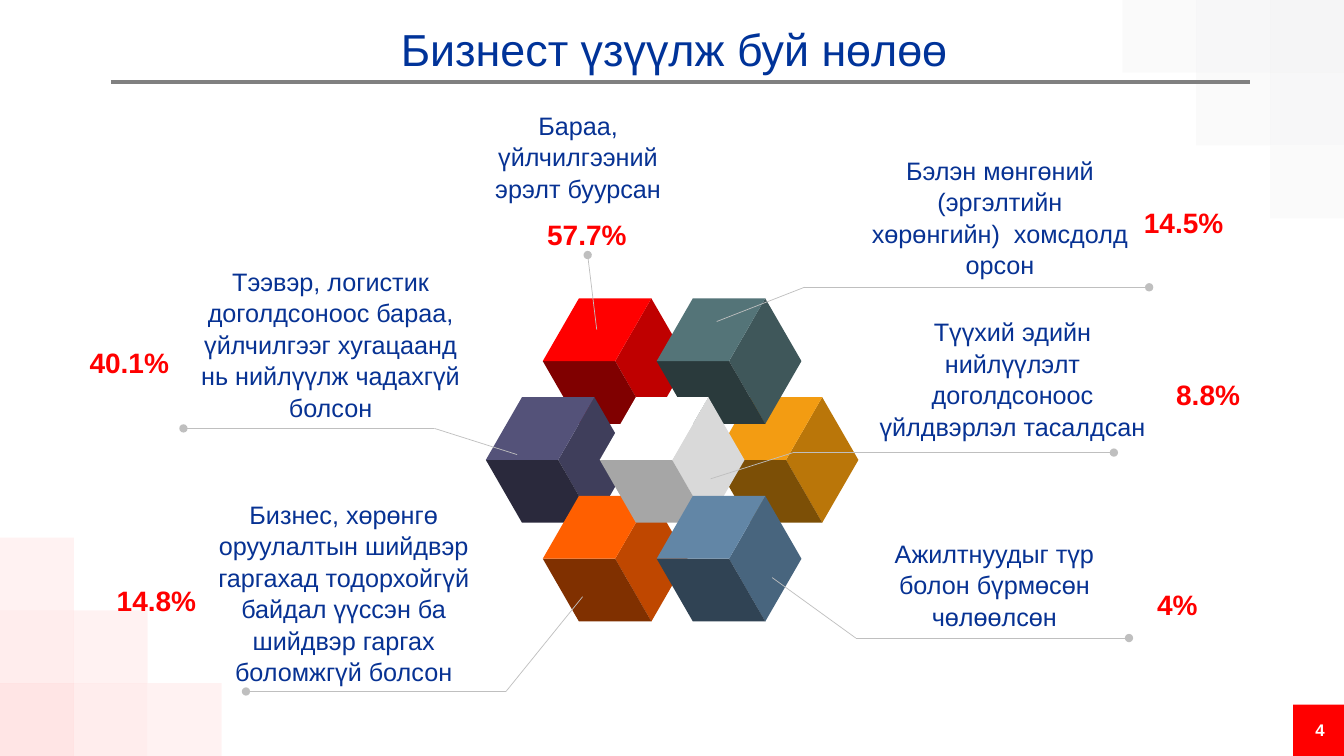
from lxml import etree
from pptx import Presentation
from pptx.dml.color import RGBColor
from pptx.enum.shapes import MSO_CONNECTOR, MSO_SHAPE
from pptx.enum.text import MSO_ANCHOR, PP_ALIGN
from pptx.oxml.ns import qn
from pptx.util import Inches, Pt

RECT = MSO_SHAPE.RECTANGLE
LINE = MSO_CONNECTOR.STRAIGHT
TOP, MIDDLE = MSO_ANCHOR.TOP, MSO_ANCHOR.MIDDLE
LEFT, CENTER = PP_ALIGN.LEFT, PP_ALIGN.CENTER

COLS, ROWS = 133.33, 75
TILE_W, TILE_H = 7.33, 7.22
CUBE_X, CUBE_Y = 48.2, 29.6
STEP_X, STEP_Y = 5.65, 9.8
EDGE_X, EDGE_Y = 3.59, 6.23

# Corner points of each cube face, counted in edges
FACES = (
    ((4, 1), (3, 0), (2, 1), (3, 2)),
    ((3, 2), (2, 1), (0, 1), (1, 2)),
    ((0, 1), (2, 1), (3, 0), (1, 0)),
)

# Column, row, then the colours of the side, front and top
CUBES = (
    (4, 1, "BA7609", "7C4F06", "F39C12"),
    (1, 0, "BF0000", "800000", "FF0000"),
    (3, 0, "3F575A", "2A3A3C", "547478"),
    (0, 1, "3F3E5B", "2A293C", "545279"),
    (1, 2, "BF4700", "803000", "FF5F00"),
    (2, 1, "D9D9D9", "A6A6A6", "FFFFFF"),
    (3, 2, "48657E", "304354", "6286A6"),
)

# Label, its box, share, its box, leader points
CALLS = (
    ("Бизнес, хөрөнгө оруулалтын шийдвэр гаргахад тодорхойгүй байдал "
     "үүссэн ба шийдвэр гаргах боломжгүй болсон", (19.3, 48.9, 29.6, 19.2),
     "14.8%", (10.6, 57.4, 10, 4.4), ((57.8, 59.2), (50.2, 68.6), (24.4, 68.6))),
    ("Ажилтнуудыг түр болон бүрмөсөн чөлөөлсөн", (84.4, 52.8, 28.5, 10.1),
     "4%", (113.8, 57.8, 6.1, 4.4), ((76.6, 57.3), (84.9, 63.3), (112, 63.3))),
    ("Түүхий эдийн нийлүүлэлт доголдсоноос үйлдвэрлэл тасалдсан",
     (86.1, 30.8, 28.7, 15.8),
     "8.8%", (115.7, 36.9, 8.4, 4.4), ((70.5, 47.5), (78.7, 44.9), (110.5, 44.9))),
    ("Бэлэн мөнгөний (эргэлтийн хөрөнгийн)  хомсдолд орсон",
     (85.5, 14.8, 27.4, 13.1),
     "14.5%", (112.5, 19.9, 10, 4.4), ((71.1, 31.9), (79.8, 28.5), (114, 28.5))),
    ("Бараа, үйлчилгээний эрэлт буурсан", (46.5, 10.3, 21.7, 10.1),
     "57.7%", (53.3, 21, 10, 4.4), ((59.2, 32.7), (58.3, 25.3))),
    ("Тээвэр, логистик доголдсоноос бараа, үйлчилгээг хугацаанд "
     "нь нийлүүлж чадахгүй болсон", (18.5, 25.8, 28.6, 16.2),
     "40.1%", (7.9, 33.7, 10, 4.4), ((51.3, 45.1), (43.1, 42.5), (18.2, 42.5))),
)


def paint(color):
    return RGBColor.from_string(color)


def unit(*cells):
    """Turn grid cells, ten to the inch, into lengths."""
    return [Inches(cell / 10) for cell in cells]


class Board:
    font = "Arial"
    navy, red, white = "073293", "FF0000", "FFFFFF"
    blue, gray, pale = "003399", "808080", "BFBFBF"
    ink = "171622"

    def __init__(self, deck):
        self.slide = deck.slides.add_slide(deck.slide_layouts[5])
        self.shapes = self.slide.shapes

    def dress(self, shape, color, alpha=None):
        shape.shadow.inherit = False
        shape.fill.solid()
        shape.fill.fore_color.rgb = paint(color)
        shape.line.fill.background()
        if alpha:
            tint = shape._element.spPr.find(qn("a:solidFill"))[0]
            etree.SubElement(tint, qn("a:alpha")).set("val", str(alpha * 1000))

    def tile(self, box, color, alpha=None):
        self.dress(self.shapes.add_shape(RECT, *unit(*box)), color, alpha)

    def face(self, points, color):
        spots = [unit(*point) for point in points]
        pen = self.shapes.build_freeform(*spots[0])
        pen.add_line_segments(spots[1:], close=True)
        self.dress(pen.convert_to_shape(), color)

    def cube(self, col, row, *colors):
        left, top = CUBE_X + col * STEP_X, CUBE_Y + row * STEP_Y
        for face, color in zip(FACES, colors):
            points = [(left + x * EDGE_X, top + y * EDGE_Y) for x, y in face]
            self.face(points, color)

    def rule(self, start, end, color, width, dot=False):
        line = self.shapes.add_connector(LINE, *unit(*start, *end))
        line.line.color.rgb = paint(color)
        line.line.width = Pt(width)
        if dot:
            edge = line._element.spPr.find(qn("a:ln"))
            etree.SubElement(edge, qn("a:tailEnd")).set("type", "oval")
        etree.SubElement(line._element.spPr, qn("a:effectLst"))

    def leader(self, points):
        """Draw a thin line through the points with a dot at its end."""
        for start, end in zip(points, points[1:]):
            self.rule(start, end, self.pale, 0.5, end == points[-1])

    def label(self, shape, text, size, color, bold=False, align=CENTER,
              anchor=TOP, wrap=True, space=None):
        frame = shape.text_frame
        frame.text = text
        frame.word_wrap = wrap
        frame.vertical_anchor = anchor
        para = frame.paragraphs[0]
        para.alignment = align
        para.line_spacing = space
        font = para.runs[0].font
        font.name, font.size, font.bold = self.font, Pt(size), bold
        font.color.rgb = paint(color)

    def text(self, box, *words, **style):
        self.label(self.shapes.add_textbox(*unit(*box)), *words, **style)

    def title(self, box, text):
        shape = self.shapes.title
        shape.left, shape.top, shape.width, shape.height = unit(*box)
        self.label(shape, text, 32, self.blue, anchor=MIDDLE)

    def corners(self):
        """Fade tiles out from the lower left and upper right corners."""
        for col in range(3):
            for row in range(3 - col):
                step = col + row
                self.tile((col * TILE_W, ROWS - (row + 1) * TILE_H, TILE_W, TILE_H),
                          self.red, (10, 7, 5)[step])
                self.tile((COLS - (col + 1) * TILE_W, row * TILE_H, TILE_W, TILE_H),
                          self.ink, 4 - step)

    def call(self, words, box, share, spot, points):
        self.text(box, words, 18, self.navy, space=1.04)
        self.text(spot, share, 20, self.red, bold=True, align=LEFT,
                  anchor=MIDDLE, wrap=False)
        self.leader(points)


def main():
    deck = Presentation()
    deck.slide_width, deck.slide_height = unit(COLS, ROWS)
    board = Board(deck)
    board.corners()
    board.tile((128.3, 69.9, 5.03, 5.1), board.red)
    board.text((128.9, 70.9, 4.1, 3), "4", 12, board.white, bold=True,
               anchor=MIDDLE, wrap=False)
    for cube in CUBES:
        board.cube(*cube)
    board.rule((11, 8.1), (124, 8.1), board.gray, 3)
    for call in CALLS:
        board.call(*call)
    board.title((9.8, 1.4, 114.2, 6.9), "Бизнест үзүүлж буй нөлөө")
    deck.save("out.pptx")


if __name__ == "__main__":
    main()
